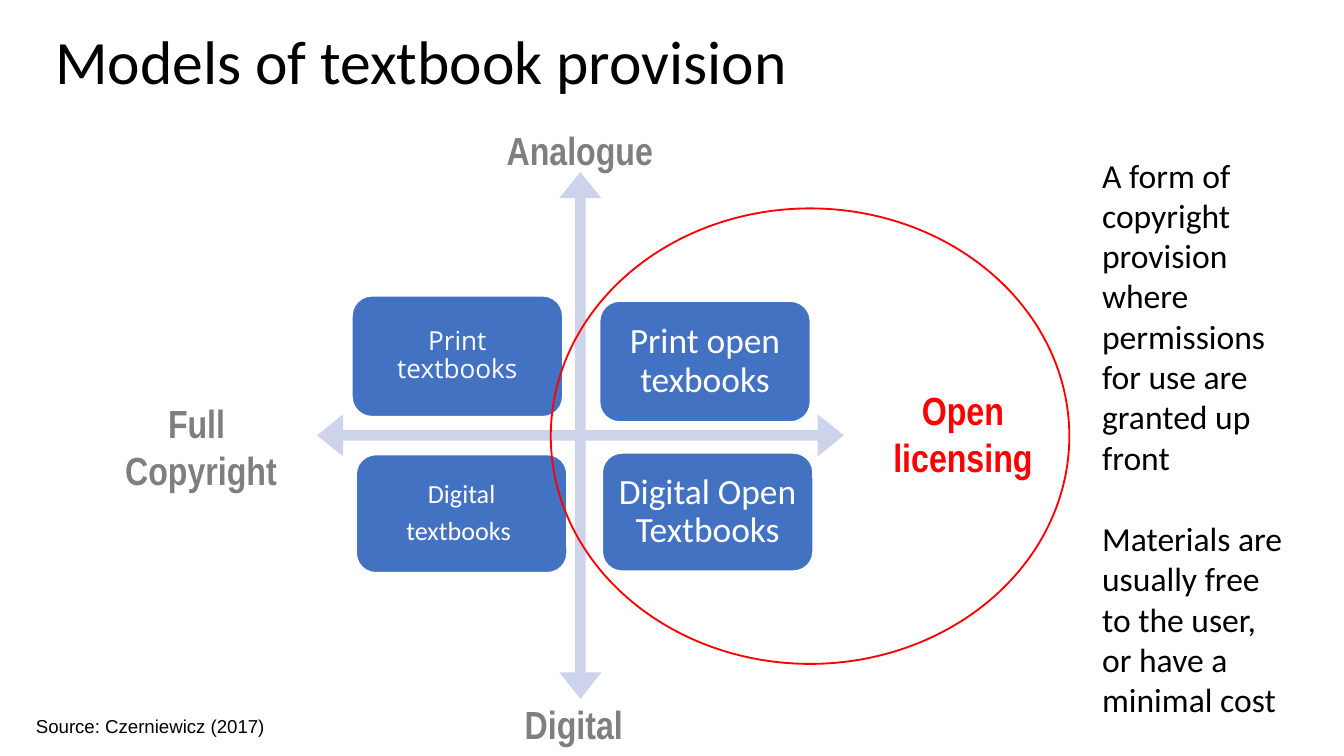
"""Build the slide on models of textbook provision."""
from pptx import Presentation
from pptx.dml.color import RGBColor
from pptx.enum.shapes import MSO_SHAPE
from pptx.enum.text import MSO_ANCHOR, MSO_AUTO_SIZE, PP_ALIGN
from pptx.util import Cm, Pt

BLACK = RGBColor(0x00, 0x00, 0x00)
WHITE = RGBColor(0xFF, 0xFF, 0xFF)
GREY = RGBColor(0x7F, 0x7F, 0x7F)
RED = RGBColor(0xFF, 0x00, 0x00)
BLUE = RGBColor(0x43, 0x72, 0xC3)
PALE_BLUE = RGBColor(0xCC, 0xD3, 0xEA)
LEFT, CENTER = PP_ALIGN.LEFT, PP_ALIGN.CENTER
TOP, MIDDLE = MSO_ANCHOR.TOP, MSO_ANCHOR.MIDDLE
NO_AUTOFIT = MSO_AUTO_SIZE.NONE
QUAD_ARROW, OVAL = MSO_SHAPE.QUAD_ARROW, MSO_SHAPE.OVAL
ROUNDED_RECTANGLE = MSO_SHAPE.ROUNDED_RECTANGLE


def write_text(shape, paragraphs, font, size, colour, insets, align=LEFT,
               anchor=TOP, bold=False, spacing=1.0, gap=0):
    frame = shape.text_frame
    frame.word_wrap = True
    frame.auto_size = NO_AUTOFIT
    frame.vertical_anchor = anchor
    frame.margin_left = frame.margin_right = Cm(insets[0])
    frame.margin_top = frame.margin_bottom = Cm(insets[1])
    for index, lines in enumerate(paragraphs):
        paragraph = frame.add_paragraph() if index else frame.paragraphs[0]
        paragraph.alignment = align
        paragraph.line_spacing = spacing
        paragraph.space_before = Pt(gap if index else 0)
        for number, line in enumerate(lines.split("\n")):
            if number:
                paragraph.add_line_break()
            run = paragraph.add_run()
            run.text = line
            run.font.name = font
            run.font.size = Pt(size)
            run.font.bold = bold
            run.font.color.rgb = colour


presentation = Presentation()
presentation.slide_width = Cm(25.4)
presentation.slide_height = Cm(14.29)
slide = presentation.slides.add_slide(presentation.slide_layouts[5])
shapes = slide.shapes

title = shapes.title
title.left, title.top, title.width, title.height = Cm(0.86), Cm(0.41), Cm(23.67), Cm(1.96)
write_text(title, ["Models of textbook provision"], "Calibri", 33, BLACK,
           (0.18, 0.18), spacing=0.9)

axes = shapes.add_shape(QUAD_ARROW, Cm(5.99), Cm(3.25), Cm(9.96), Cm(9.96))
axes.shadow.inherit = False
for index, adjustment in enumerate((0.02, 0.04, 0.05)):
    axes.adjustments[index] = adjustment
axes.fill.solid()
axes.fill.fore_color.rgb = PALE_BLUE
axes.line.fill.background()

quadrants = [
    (6.65, 5.59, 2.29, ["Print textbooks"], "Open Sans", 14, 0.15),
    (11.33, 5.69, 2.29, ["Print open texbooks"], "Calibri", 19, 0.2),
    (6.73, 8.59, 2.24, ["Digital", "textbooks "], "Calibri", 14, 0.15),
    (11.38, 8.56, 2.24, ["Digital Open Textbooks"], "Calibri", 19, 0.2),
]
for left, top, height, paragraphs, font, size, inset in quadrants:
    quadrant = shapes.add_shape(ROUNDED_RECTANGLE, Cm(left), Cm(top), Cm(3.99), Cm(height))
    quadrant.shadow.inherit = False
    quadrant.fill.solid()
    quadrant.fill.fore_color.rgb = BLUE
    quadrant.line.color.rgb = WHITE
    quadrant.line.width = Pt(1)
    write_text(quadrant, paragraphs, font, size, WHITE, (inset, inset),
               CENTER, MIDDLE, spacing=0.9, gap=5)

axis_labels = [
    (9.22, 13.13, 3.25, 1.09, "Digital", GREY),
    (8.79, 2.29, 4.34, 1.09, "Analogue", GREY),
    (1.78, 7.44, 4.04, 1.98, "Full \nCopyright", GREY),
    (16.18, 7.21, 4.04, 1.98, "Open\nlicensing", RED),
]
for left, top, width, height, text, colour in axis_labels:
    label = shapes.add_textbox(Cm(left), Cm(top), Cm(width), Cm(height))
    write_text(label, [text], "Arial Narrow", 21, colour, (0.18, 0.1), CENTER, bold=True)

highlight = shapes.add_shape(OVAL, Cm(10.41), Cm(3.94), Cm(9.8), Cm(8.61))
highlight.shadow.inherit = False
highlight.fill.background()
highlight.line.color.rgb = RED
highlight.line.width = Pt(1)

definition = shapes.add_textbox(Cm(20.65), Cm(2.82), Cm(3.89), Cm(10.97))
write_text(definition, [
    "A form of copyright provision where permissions for use are granted up front",
    "Materials are usually free to the user,\nor have a minimal cost",
], "Calibri", 18, BLACK, (0.18, 0.1), gap=22)

source = shapes.add_textbox(Cm(0.43), Cm(13.26), Cm(5.16), Cm(1.02))
write_text(source, ["Source: Czerniewicz (2017)"], "Arial", 10, BLACK, (0.25, 0.25))

presentation.save("out.pptx")
